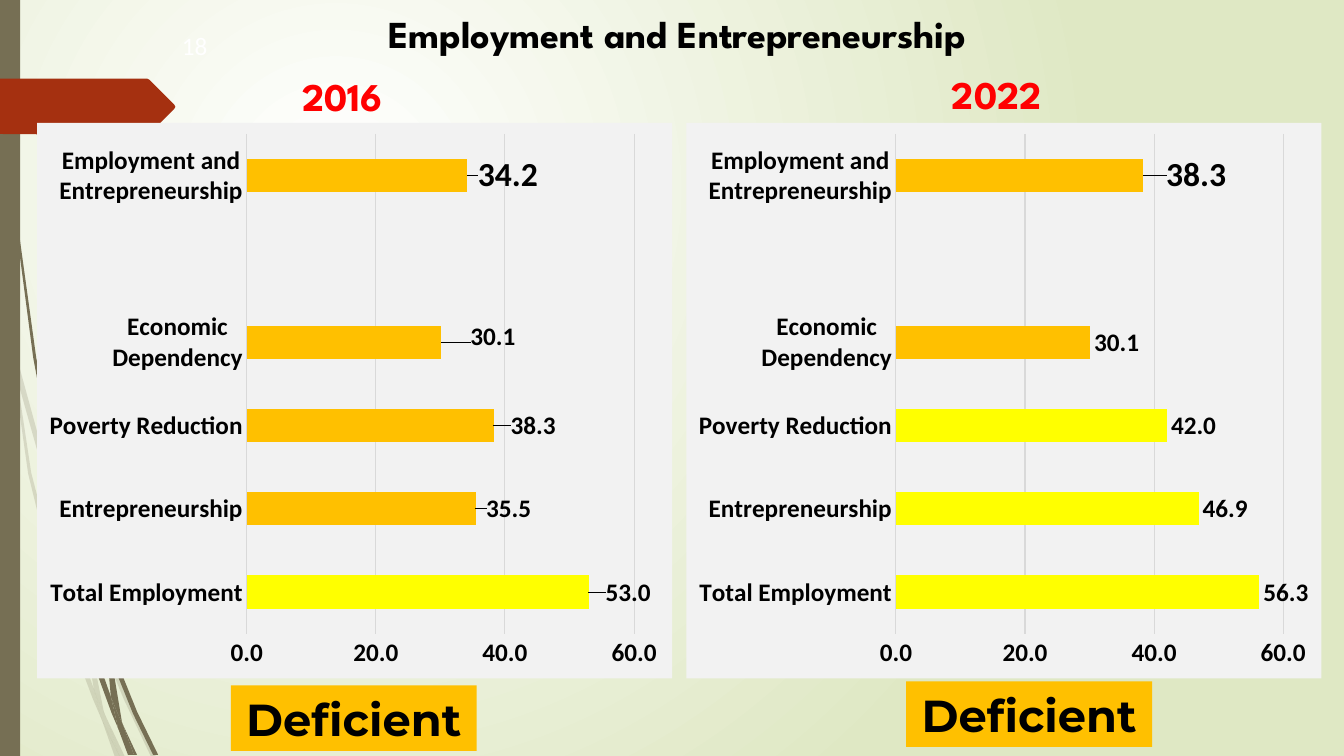
from dataclasses import dataclass

import lxml.etree
import pptx
import pptx.chart.data
import pptx.dml.color
import pptx.enum.chart
import pptx.enum.shapes
import pptx.enum.text
import pptx.oxml
import pptx.oxml.ns
import pptx.util

Pt = pptx.util.Pt
qn = pptx.oxml.ns.qn
RGB = pptx.dml.color.RGBColor.from_string
Points = list[tuple[int, int]]


@dataclass(frozen=True)
class Theme:
    black: str = "000000"
    white: str = "FFFFFF"
    red: str = "FF0000"
    amber: str = "FFC000"
    yellow: str = "FFFF00"
    olive: str = "766F54"
    rust: str = "A53010"
    orange: str = "DE7E18"
    sage: str = "DFE8C4"
    panel: str = "F2F2F2"
    grid: str = "D9D9D9"
    heading: str = "League Spartan"
    badge: str = "Montserrat"
    body: str = "Calibri"
    title_size: float = 27.2
    year_size: float = 28
    badge_size: float = 32
    chart_size: float = 18
    total_size: float = 24


THEME = Theme()
OUTLINE_UNIT = Pt(0.72)
CATEGORIES = ["Total Employment", "Entrepreneurship", "Poverty Reduction",
              "Economic Dependency", "", "Employment and Entrepreneurship"]
TOTAL = len(CATEGORIES) - 1


@dataclass(frozen=True)
class Box:
    left: float
    top: float
    width: float
    height: float

    def lengths(self) -> tuple[int, ...]:
        return tuple(Pt(n) for n in (self.left, self.top, self.width, self.height))


@dataclass(frozen=True)
class YearPanel:
    year: str
    year_box: Box
    chart_box: Box
    badge_box: Box
    values: tuple
    series_color: str
    yellow_bars: tuple[int, ...]
    label_shifts: dict[int, tuple[float, float]]


PANELS = [
    YearPanel("2016", Box(155.5, 49, 178, 39), Box(26.6, 87.8, 453.6, 396.7),
              Box(164.9, 489.6, 175.7, 46.8), (53.0, 35.5, 38.3, 30.1, None, 34.2),
              THEME.orange, (0,),
              {0: (0.02, 0), 1: (0.01, 0), 2: (0.02, 0), 3: (0.04, -0.01), 5: (0.01, 0)}),
    YearPanel("2022", Box(634.3, 47.5, 155.5, 39), Box(490.3, 87.8, 453.6, 396.7),
              Box(647.3, 486.7, 175.7, 46.8), (56.3, 46.9, 42.0, 30.1, None, 38.3),
              THEME.rust, (0, 1, 2), {5: (0.03, 0)}),
]

# Outlines are in units of 0.72 pt.
PALE_WISPS: list[Points] = [
    [(11, 350), (9, 322), (0, 282), (0, 299), (10, 344)],
    [(58, 522), (84, 599), (85, 586), (62, 520), (14, 345), (17, 376)],
    [(92, 607), (88, 596), (88, 610), (123, 694), (150, 751), (155, 751), (127, 692)],
    [(119, 751), (124, 751), (105, 711)],
    [(93, 683), (70, 619), (31, 469), (17, 376), (11, 350), (28, 470), (65, 621),
     (92, 693), (101, 714), (99, 707)],
    [(84, 599), (87, 646), (93, 683), (96, 692), (105, 711), (103, 706), (91, 646),
     (88, 610), (88, 608)],
    [(88, 584), (110, 462), (160, 349), (229, 245), (268, 198), (290, 175), (312, 154),
     (312, 153), (289, 175), (268, 197), (228, 244), (158, 348), (107, 461), (85, 584),
     (85, 586), (88, 596)],
    [(101, 714), (114, 751), (119, 751)],
    [(88, 608), (88, 610), (88, 596), (85, 586), (84, 599)],
    [(96, 692), (93, 683), (99, 707), (101, 714), (119, 751), (105, 711)],
]
DARK_WISPS: list[Points] = [
    [(7, 110), (17, 233), (33, 355), (56, 477), (57, 481), (55, 457), (55, 453),
     (36, 355), (19, 232), (8, 109), (5, 48), (4, 0), (3, 0), (4, 48)],
    [(88, 592), (106, 645), (106, 633), (106, 631), (93, 590), (60, 472), (64, 505)],
    [(113, 649), (110, 641), (111, 656), (132, 708), (152, 749), (157, 749), (136, 706)],
    [(110, 691), (98, 657), (72, 556), (64, 505), (57, 477), (68, 557), (93, 659),
     (111, 708), (117, 722), (116, 717)],
    [(60, 472), (58, 453), (54, 349), (58, 245), (63, 193), (70, 141), (62, 193),
     (56, 245), (52, 349), (55, 449)],
    [(133, 749), (136, 749), (122, 719)],
    [(57, 477), (64, 505), (60, 472), (55, 449), (55, 453)],
    [(111, 633), (125, 552), (158, 476), (205, 406), (231, 374), (245, 359), (261, 344),
     (260, 344), (245, 358), (231, 373), (204, 405), (156, 474), (122, 551), (106, 631),
     (110, 641)],
    [(117, 722), (127, 749), (131, 749)],
    [(106, 645), (110, 691), (116, 706), (122, 719), (121, 716), (111, 656), (109, 651)],
    [(106, 645), (109, 651), (111, 656), (110, 641), (106, 631), (106, 633)],
    [(116, 706), (110, 691), (116, 717), (117, 722), (130, 749), (133, 749), (122, 719)],
]
RIBBON: Points = [(173, 108), (148, 133), (146, 134), (136, 134), (0, 133), (0, 78),
                  (136, 78), (146, 78), (148, 79), (173, 104), (174, 106)]


def paint(shape, color: str) -> None:
    shape.shadow.inherit = False
    shape.fill.solid()
    shape.fill.fore_color.rgb = RGB(color)
    shape.line.fill.background()


def draw_outline(page, points: Points, color: str, opacity: int = 100) -> None:
    builder = page.shapes.build_freeform(*points[0], scale=float(OUTLINE_UNIT))
    builder.add_line_segments(points[1:], close=True)
    shape = builder.convert_to_shape()
    paint(shape, color)
    if opacity < 100:
        tint = shape._element.spPr.find(qn("a:solidFill"))[0]
        lxml.etree.SubElement(tint, qn("a:alpha")).set("val", str(opacity * 1000))


def draw_rectangle(page, box: Box, color: str):
    shape = page.shapes.add_shape(pptx.enum.shapes.MSO_SHAPE.RECTANGLE, *box.lengths())
    paint(shape, color)
    return shape


def style_font(font, name: str, size: float, color: str, bold: bool = True) -> None:
    font.name, font.size, font.bold = name, Pt(size), bold
    font.color.rgb = RGB(color)


def write(shape, text: str, name: str, size: float, color: str, bold: bool = True) -> None:
    frame = shape.text_frame
    frame.word_wrap = True
    frame.auto_size = pptx.enum.text.MSO_AUTO_SIZE.NONE
    frame.vertical_anchor = pptx.enum.text.MSO_ANCHOR.MIDDLE
    para = frame.paragraphs[0]
    para.alignment = pptx.enum.text.PP_ALIGN.CENTER
    span = para.add_run()
    span.text = text
    style_font(span.font, name, size, color, bold)


def draw_background(page) -> None:
    fill = page.background.fill
    fill.gradient()
    for stop, color in zip(fill.gradient_stops, (THEME.white, THEME.sage)):
        stop.color.rgb = RGB(color)
    gradient = page._element.find(".//" + qn("a:gradFill"))
    gradient.remove(gradient.find(qn("a:lin")))
    circle = lxml.etree.SubElement(gradient, qn("a:path"), {"path": "circle"})
    lxml.etree.SubElement(circle, qn("a:fillToRect"),
                          {"l": "50000", "t": "50000", "r": "100000", "b": "100000"})


def manual_layout(**settings):
    layout = lxml.etree.Element(qn("c:layout"))
    manual = lxml.etree.SubElement(layout, qn("c:manualLayout"))
    for name, value in settings.items():
        lxml.etree.SubElement(manual, qn("c:" + name)).set("val", str(value))
    return layout


def style_frame(chart) -> None:
    """Fill the chart area and fix the place of the bars in it."""
    style_font(chart.font, THEME.body, THEME.chart_size, THEME.black, False)
    space = chart._chartSpace
    space.find(qn("c:txPr")).addprevious(pptx.oxml.parse_xml(
        f'<c:spPr {pptx.oxml.ns.nsdecls("c", "a")}><a:solidFill><a:srgbClr val="{THEME.panel}"/>'
        '</a:solidFill><a:ln><a:noFill/></a:ln></c:spPr>'))
    plot_area = space.find(".//" + qn("c:plotArea"))
    for layout in plot_area.findall(qn("c:layout")):
        plot_area.remove(layout)
    plot_area.insert(0, manual_layout(layoutTarget="inner", xMode="edge", yMode="edge",
                                      x=0.33, y=0.02, w=0.61, h=0.9))


def draw_chart(page, panel: YearPanel) -> None:
    data = pptx.chart.data.CategoryChartData(number_format="0.0")
    data.categories = CATEGORIES
    data.add_series("Series 1", panel.values)
    kinds = pptx.enum.chart
    chart = page.shapes.add_chart(kinds.XL_CHART_TYPE.BAR_CLUSTERED,
                                  *panel.chart_box.lengths(), data).chart
    chart.has_title = chart.has_legend = False
    style_frame(chart)
    for axis in (chart.category_axis, chart.value_axis):
        axis.major_tick_mark = axis.minor_tick_mark = kinds.XL_TICK_MARK.NONE
        axis.format.line.fill.background()
        style_font(axis.tick_labels.font, THEME.body, THEME.chart_size, THEME.black)
    scale = chart.value_axis
    scale.minimum_scale, scale.maximum_scale, scale.major_unit = 0, 60, 20
    scale.tick_labels.number_format = "0.0"
    scale.tick_labels.number_format_is_linked = False
    scale.major_gridlines.format.line.color.rgb = RGB(THEME.grid)
    scale.major_gridlines.format.line.width = Pt(0.75)

    plot = chart.plots[0]
    plot.gap_width, plot.vary_by_categories = 150, False
    series = plot.series[0]
    series.invert_if_negative = False
    series.format.fill.solid()
    series.format.fill.fore_color.rgb = RGB(panel.series_color)
    labels = series.data_labels
    labels.show_value = True
    labels.number_format, labels.number_format_is_linked = "0.0", False
    labels.position = kinds.XL_LABEL_POSITION.OUTSIDE_END
    style_font(labels.font, THEME.body, THEME.chart_size, THEME.black)
    for index, value in enumerate(panel.values):
        if value is not None:
            fill = series.points[index].format.fill
            fill.solid()
            fill.fore_color.rgb = RGB(THEME.yellow if index in panel.yellow_bars else THEME.amber)
    for index, (x, y) in panel.label_shifts.items():
        label = series.points[index].data_label
        size = THEME.total_size if index == TOTAL else THEME.chart_size
        style_font(label.font, THEME.body, size, THEME.black)
        label.position = kinds.XL_LABEL_POSITION.OUTSIDE_END
        label._dLbl.insert(1, manual_layout(x=x, y=y))


def main() -> None:
    deck = pptx.Presentation()
    deck.slide_width, deck.slide_height = Pt(960), Pt(540)
    page = deck.slides.add_slide(deck.slide_layouts.get_by_name("Title Only"))
    draw_background(page)
    for wisp in PALE_WISPS:
        draw_outline(page, wisp, THEME.olive, opacity=20)
    for wisp in DARK_WISPS:
        draw_outline(page, wisp, THEME.olive)
    draw_rectangle(page, Box(0, 0, 14.4, 540), THEME.olive)
    draw_outline(page, RIBBON, THEME.rust)

    title = page.shapes.title
    title.left, title.top, title.width, title.height = Box(241.2, 0, 485.3, 48.2).lengths()
    write(title, "Employment and Entrepreneurship", THEME.heading, THEME.title_size, THEME.black)
    number = page.shapes.add_textbox(*Box(118, 18, 42, 29).lengths())
    write(number, "18", THEME.body, THEME.chart_size, THEME.white, bold=False)
    for panel in PANELS:
        draw_chart(page, panel)
        year = page.shapes.add_textbox(*panel.year_box.lengths())
        write(year, panel.year, THEME.heading, THEME.year_size, THEME.red)
        badge = draw_rectangle(page, panel.badge_box, THEME.amber)
        write(badge, "Deficient", THEME.badge, THEME.badge_size, THEME.black)
    deck.save("out.pptx")


if __name__ == "__main__":
    main()
